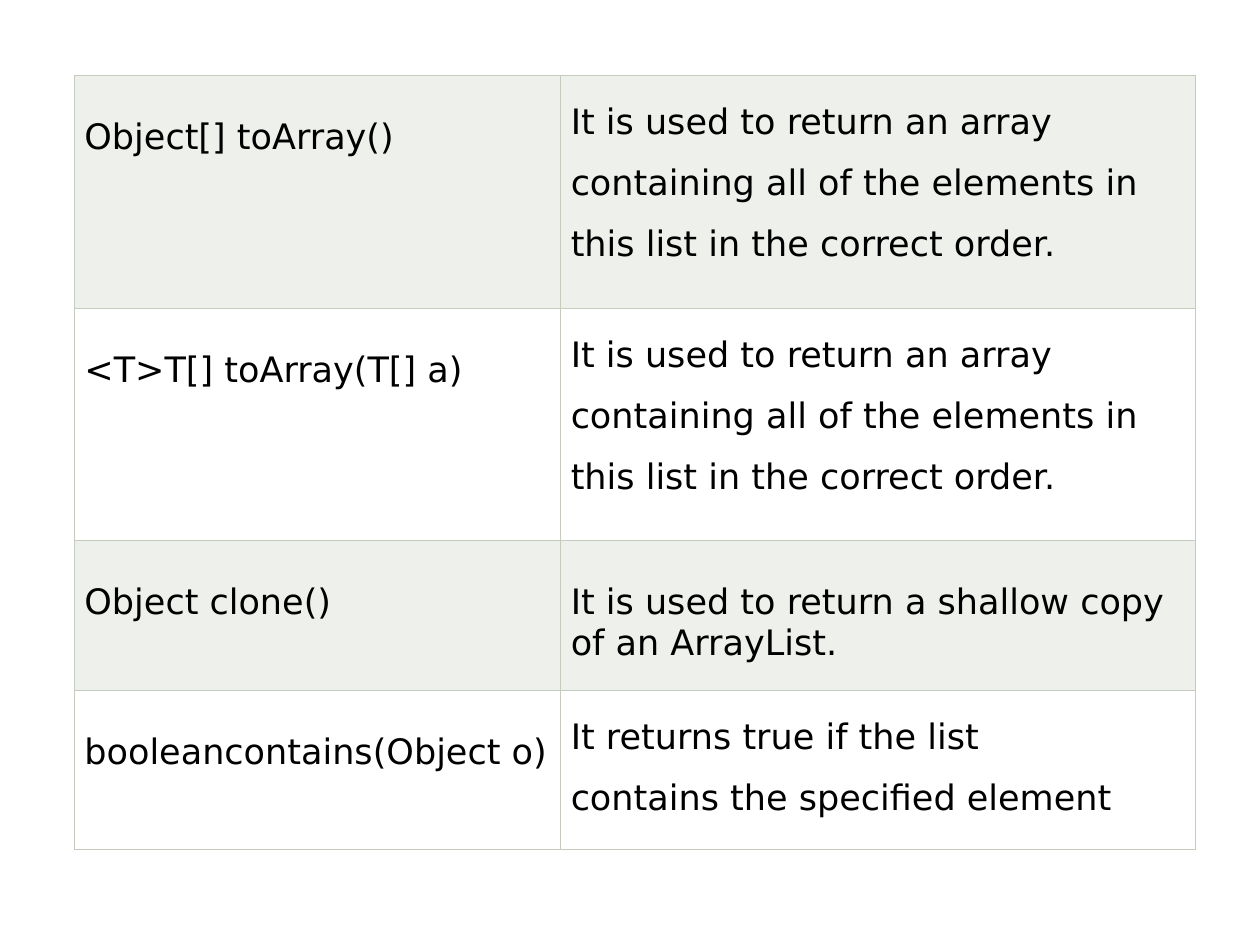
from lxml import etree
from pptx import Presentation
from pptx.dml.color import RGBColor
from pptx.oxml import ns
from pptx.util import Inches, Pt

COLORS = {"text": "000000", "band": "EEF0EB", "border": "C6CCBD"}
FONT = "DejaVu Sans"
COLUMN_WIDTHS = (3.86, 5.04)
SINGLE = {"top": 0.33, "spacing": 1.0, "right": 0}
SPACED = {"top": 0.05, "spacing": 1.5, "right": 0}
NARROW = {**SPACED, "right": 0.6}
ARRAY_TEXT = ("It is used to return an array containing all of the elements "
              "in this list in the correct order.")
METHODS = [
    (1.85, "Object[] toArray()", ARRAY_TEXT, SPACED),
    (1.84, "<T>T[] toArray(T[] a)", ARRAY_TEXT, SPACED),
    (1.19, "Object clone()",
     "It is used to return a shallow copy of an ArrayList.", SINGLE),
    (1.26, "booleancontains(Object o)",
     "It returns true if the list contains the specified element", NARROW),
]


def set_borders(cell):
    """Draw a thin line on all four sides of a cell."""
    properties = cell._tc.get_or_add_tcPr()
    for side in ("a:lnL", "a:lnR", "a:lnT", "a:lnB"):
        line = etree.SubElement(properties, ns.qn(side), w=str(Pt(0.75)))
        fill = etree.SubElement(line, ns.qn("a:solidFill"))
        etree.SubElement(fill, ns.qn("a:srgbClr"), val=COLORS["border"])


def fill_cell(cell, content, layout, banded):
    """Write one cell with its borders, fill, margins and text."""
    set_borders(cell)
    if banded:
        cell.fill.solid()
        cell.fill.fore_color.rgb = RGBColor.from_string(COLORS["band"])
    else:
        cell.fill.background()
    cell.margin_left = Inches(0.08)
    cell.margin_top = Inches(layout["top"])
    cell.margin_right = Inches(layout["right"])
    cell.margin_bottom = 0
    paragraph = cell.text_frame.paragraphs[0]
    paragraph.line_spacing = layout["spacing"]
    run = paragraph.add_run()
    run.text = content
    run.font.name = FONT
    run.font.size = Pt(20)
    run.font.color.rgb = RGBColor.from_string(COLORS["text"])


def add_method_table(slide, left, top, width, height):
    """Add the table of list methods and their descriptions."""
    table = slide.shapes.add_table(
        len(METHODS), len(COLUMN_WIDTHS), left, top, width, height).table
    table.first_row = False
    table.horz_banding = False
    total_width = sum(COLUMN_WIDTHS)
    total_height = sum(method[0] for method in METHODS)
    for column, share in zip(table.columns, COLUMN_WIDTHS):
        column.width = int(width * share / total_width)
    for index, (share, name, description, layout) in enumerate(METHODS):
        table.rows[index].height = int(height * share / total_height)
        banded = index % 2 == 0
        fill_cell(table.cell(index, 0), name, SINGLE, banded)
        fill_cell(table.cell(index, 1), description, layout, banded)


def main():
    """Build and save the presentation."""
    presentation = Presentation()
    presentation.slide_width = Inches(10)
    presentation.slide_height = Inches(7.5)
    slide = presentation.slides.add_slide(presentation.slide_layouts[6])
    add_method_table(slide, Inches(0.59), Inches(0.6), Inches(8.9), Inches(6.14))
    presentation.save("out.pptx")


if __name__ == "__main__":
    main()
